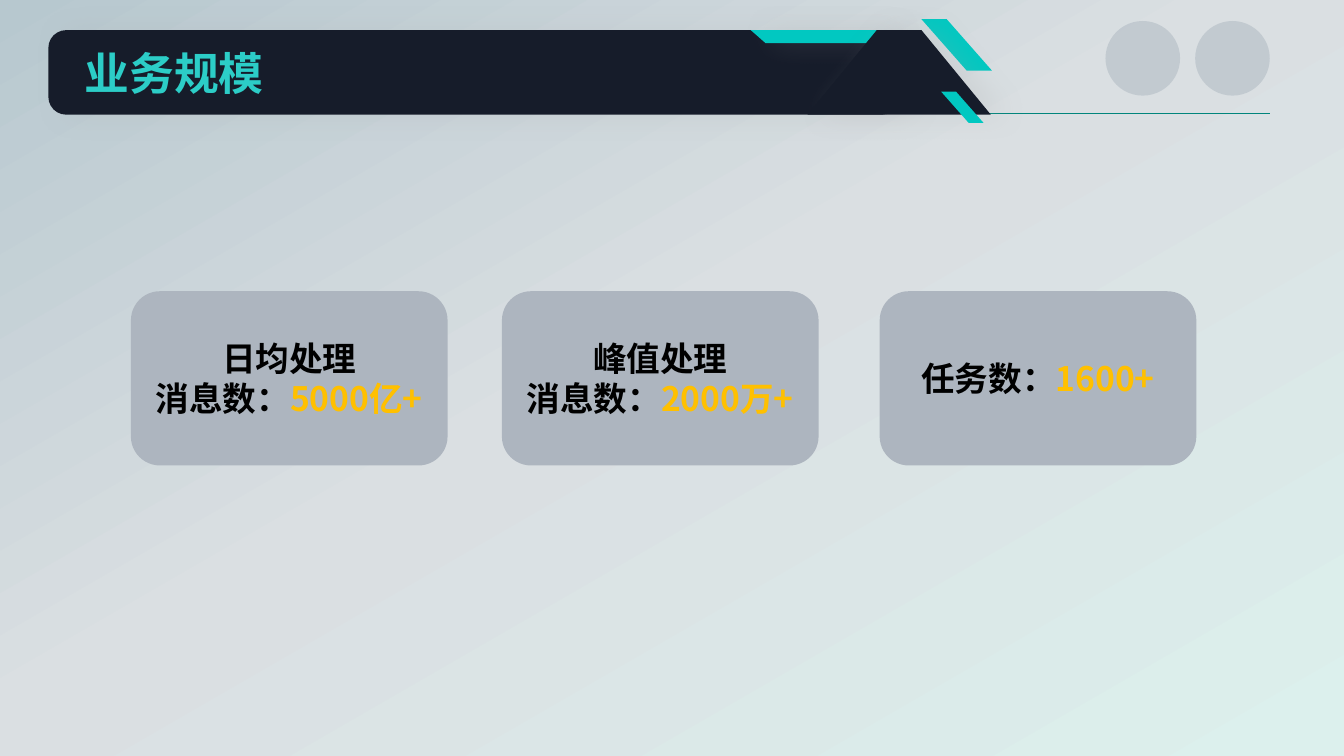
from copy import deepcopy

from lxml.etree import SubElement
from pptx import Presentation
from pptx.dml.color import RGBColor
from pptx.enum.shapes import MSO_CONNECTOR, MSO_SHAPE
from pptx.enum.text import MSO_ANCHOR, MSO_AUTO_SIZE, PP_ALIGN
from pptx.oxml.ns import qn
from pptx.util import Cm, Pt

TITLE = "业务规模"
BLACK, GOLD = "000000", "FFC000"
NAVY, TEAL, GREY = "161C2A", "01C8C1", "66788C"
CARDS = [
    (3.3, [[("日均处理", BLACK)], [("消息数：", BLACK), ("5000亿+", GOLD)]]),
    (12.65, [[("峰值处理", BLACK)], [("消息数：", BLACK), ("2000万+", GOLD)]]),
    (22.17, [[("任务数：", BLACK), ("1600+", GOLD)]]),
]
CARD_TOP, CARD_WIDTH, CARD_HEIGHT = 7.34, 7.98, 4.39
BACKDROP = [(0, "DCF0ED"), (0.53, "DADFE2"), (1, "B7C8CF")]
CIRCLE_LEFTS = [27.86, 30.12]
BANNER = [
    (MSO_SHAPE.ROUNDED_RECTANGLE, (1.22, 0.76, 21.46, 2.13), 0.21, NAVY, None, True),
    (MSO_SHAPE.TRAPEZOID, (18.92, 0.76, 3.48, 0.33), 1.14, TEAL, "flipV", True),
    (MSO_SHAPE.PARALLELOGRAM, (23.22, 0.48, 1.78, 1.3), 0.88, TEAL, "flipH", False),
    (MSO_SHAPE.TRAPEZOID, (20.35, 0.76, 4.62, 2.13), 0.82, NAVY, None, True),
    (MSO_SHAPE.PARALLELOGRAM, (23.72, 2.31, 1.07, 0.79), 0.88, TEAL, "flipH", False),
]


def paint(color, value):
    color.rgb = RGBColor.from_string(value)


def add_figure(slide, preset, box, color):
    figure = slide.shapes.add_shape(preset, *map(Cm, box))
    figure.shadow.inherit = False
    figure.fill.solid()
    paint(figure.fill.fore_color, color)
    figure.line.fill.background()
    return figure


def set_alpha(color_element, percent):
    SubElement(color_element, qn("a:alpha"), val=str(percent * 1000))


def add_shadow(figure):
    effects = figure.element.spPr.find(qn("a:effectLst"))
    shadow = SubElement(effects, qn("a:outerShdw"), blurRad=str(Pt(20)),
                        dist=str(Pt(10)), dir="0", algn="ctr", rotWithShape="0")
    set_alpha(SubElement(shadow, qn("a:srgbClr"), val="A6A6A6"), 20)


def add_run(paragraph, words, size, font_name, color):
    run = paragraph.add_run()
    run.text = words
    run.font.size = Pt(size)
    run.font.bold = True
    paint(run.font.color, color)
    run.font.name = font_name
    SubElement(run.font._element, qn("a:ea"), typeface="Noto Sans CJK SC")


def add_backdrop(slide):
    fill = slide.background.fill
    fill.gradient()
    fill.gradient_angle = 120
    stop_list = slide.element.find(".//" + qn("a:gsLst"))
    stop_list.append(deepcopy(stop_list[-1]))
    for stop, (position, color) in zip(fill.gradient_stops, BACKDROP):
        stop.position = position
        paint(stop.color, color)


def add_header(slide):
    rule = slide.shapes.add_connector(
        MSO_CONNECTOR.STRAIGHT, Cm(1.85), Cm(2.85), Cm(32), Cm(2.85))
    paint(rule.line.color, "01857C")
    rule.line.width = Pt(0.75)
    SubElement(rule.element.spPr, qn("a:effectLst"))

    for left in CIRCLE_LEFTS:
        circle = add_figure(slide, MSO_SHAPE.OVAL, (left, 0.53, 1.88, 1.88), GREY)
        set_alpha(circle.element.spPr.find(".//" + qn("a:srgbClr")), 20)

    for preset, box, slant, color, flip, shaded in BANNER:
        piece = add_figure(slide, preset, box, color)
        piece.adjustments[0] = slant
        if flip:
            piece.element.spPr.find(qn("a:xfrm")).set(flip, "1")
        if shaded:
            add_shadow(piece)

    title = slide.shapes.add_textbox(Cm(2.13), Cm(1.14), Cm(4.57), Cm(1.37))
    frame = title.text_frame
    frame.margin_left = frame.margin_top = frame.margin_right = frame.margin_bottom = 0
    frame.word_wrap = False
    frame.auto_size = MSO_AUTO_SIZE.SHAPE_TO_FIT_TEXT
    add_run(frame.paragraphs[0], TITLE, 32, "Arial", "2CCDC7")


def add_card(slide, left, lines):
    card = add_figure(slide, MSO_SHAPE.ROUNDED_RECTANGLE,
                      (left, CARD_TOP, CARD_WIDTH, CARD_HEIGHT), "ADB5BF")
    frame = card.text_frame
    frame.word_wrap = True
    frame.vertical_anchor = MSO_ANCHOR.MIDDLE
    for number, line in enumerate(lines):
        paragraph = frame.add_paragraph() if number else frame.paragraphs[0]
        paragraph.alignment = PP_ALIGN.CENTER
        for words, color in line:
            add_run(paragraph, words, 24, "Noto Sans CJK SC", color)


def main():
    deck = Presentation()
    deck.slide_width, deck.slide_height = Cm(33.87), Cm(19.05)
    slide = deck.slides.add_slide(deck.slide_layouts[6])
    add_backdrop(slide)
    add_header(slide)
    for left, lines in CARDS:
        add_card(slide, left, lines)
    deck.save("out.pptx")


if __name__ == "__main__":
    main()
